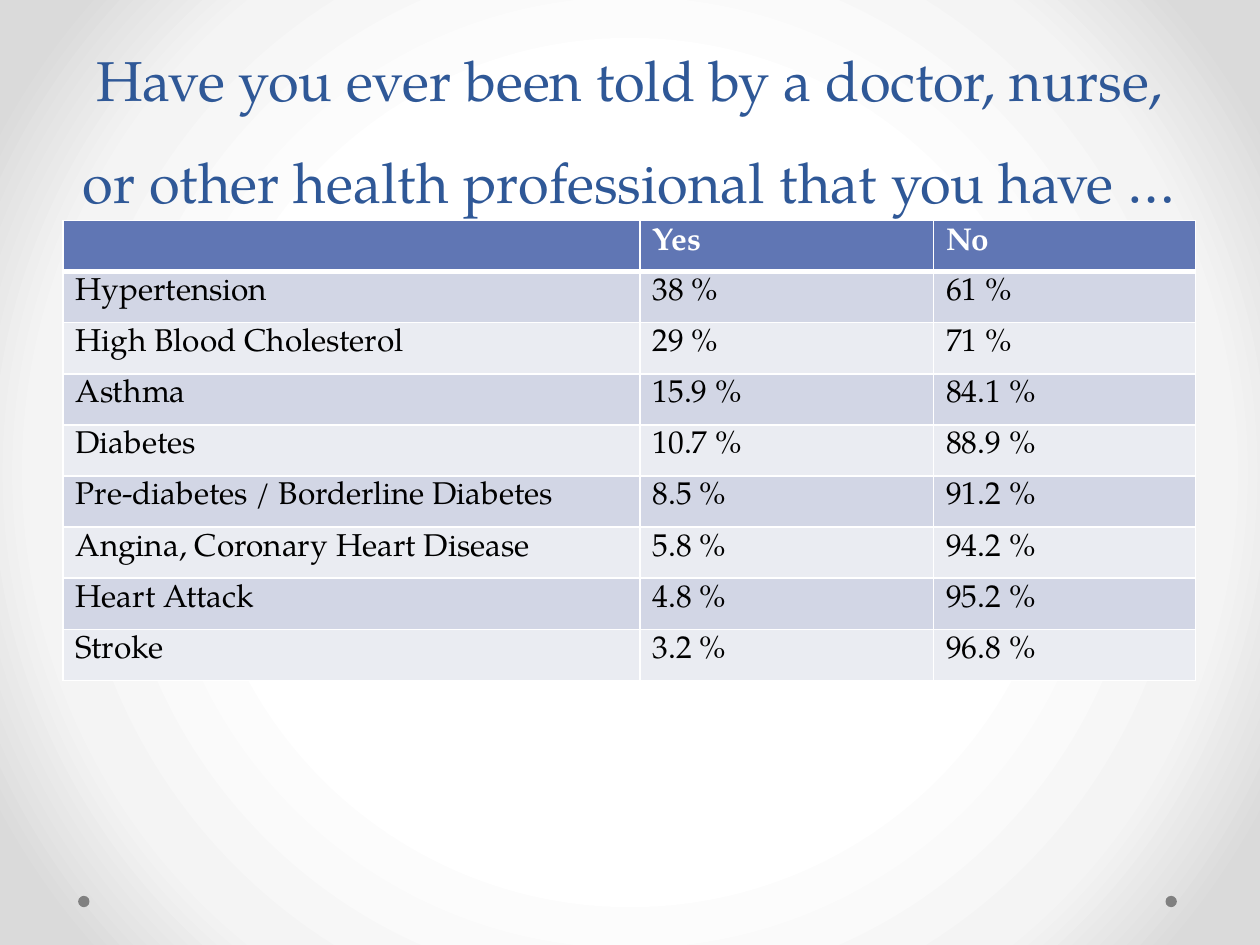
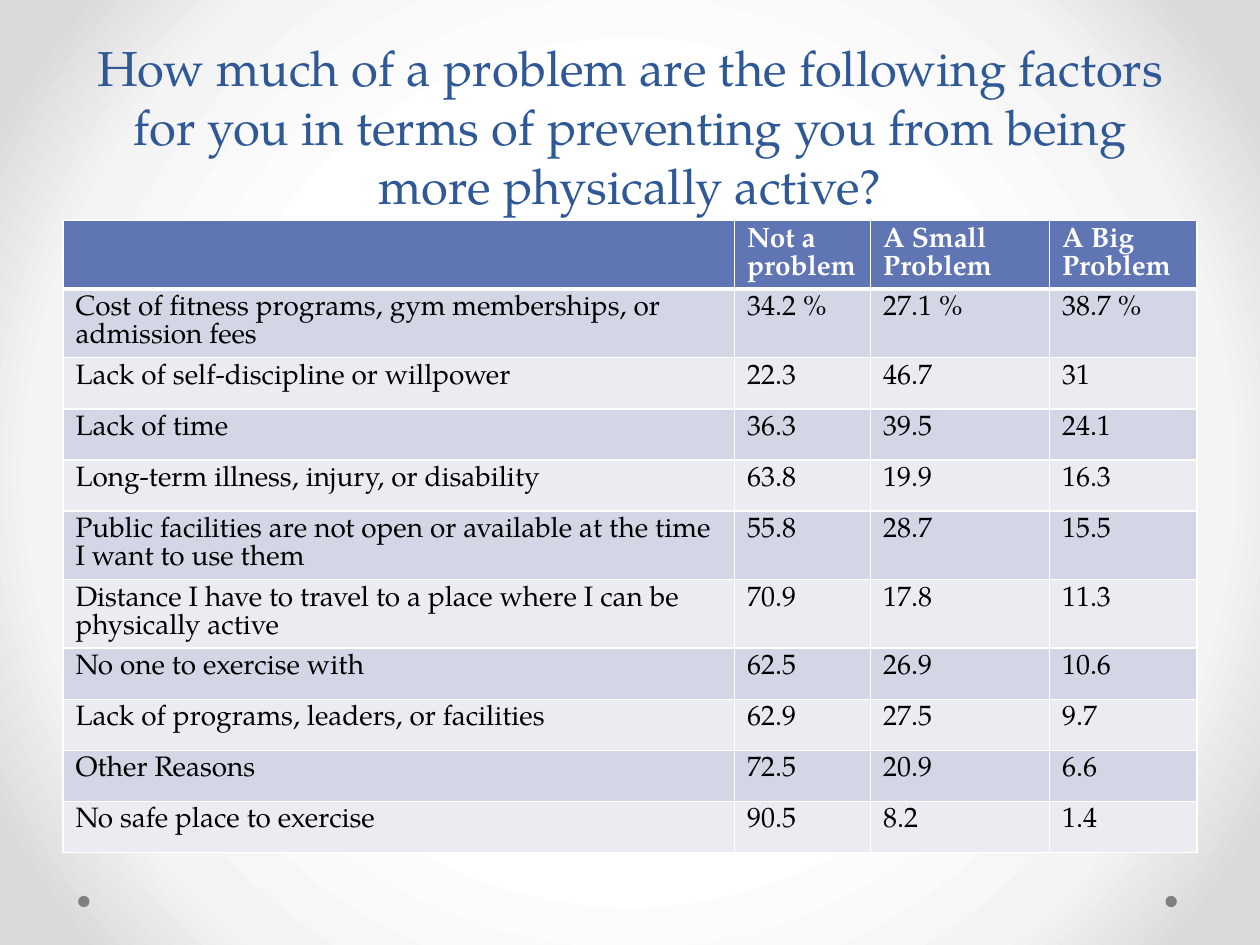
from lxml.etree import SubElement
from pptx import Presentation
from pptx.dml.color import RGBColor
from pptx.enum.shapes import MSO_SHAPE
from pptx.enum.text import MSO_ANCHOR, PP_ALIGN
from pptx.oxml.ns import qn
from pptx.util import Inches, Pt

FONT = "TeX Gyre Pagella"
BLUE, HEAD, BANDS = "2F5897", "6076B4", ("D2D6E5", "EAECF2")
WHITE, BLACK, GREY = "FFFFFF", "000000", "808080"
GLOW = ((50, "FFFFFF"), (76, "F4F4F4"), (92, "DADADA"))
WIDE, HIGH = 10, 7.5
EDGE, TOP = 0.5, 1.75
SPAN = WIDE - 2 * EDGE
ROW = 3.65 / 9
DOT, DOT_Y, DOTS = 0.09, 7.11, (0.62, 9.25)

PAGES = [
    {
        "title": "Have you ever been told by a doctor, nurse, "
                 "or other health professional that you have …",
        "size": 32, "lead": 58, "text": 18,
        "cols": (4.58, 2.33, 2.08),
        "rows": [
            ("", "Yes", "No"),
            ("Hypertension", "38 %", "61 %"),
            ("High Blood Cholesterol", "29 %", "71 %"),
            ("Asthma", "15.9 %", "84.1 %"),
            ("Diabetes", "10.7 %", "88.9 %"),
            ("Pre-diabetes / Borderline Diabetes", "8.5 %", "91.2 %"),
            ("Angina, Coronary Heart Disease", "5.8 %", "94.2 %"),
            ("Heart Attack", "4.8 %", "95.2 %"),
            ("Stroke", "3.2 %", "96.8 %"),
        ],
    },
    {
        "title": "How much of a problem are the following factors for you "
                 "in terms of preventing you from being more physically active?",
        "size": 28, "lead": None, "text": 16,
        "cols": (5.33, 1.08, 1.42, 1.17),
        "rows": [
            ("", "Not a problem", "A Small Problem", "A Big Problem"),
            ("Cost of fitness programs, gym memberships, or admission fees",
             "34.2 %", "27.1 %", "38.7 %"),
            ("Lack of self-discipline or willpower", "22.3", "46.7", "31"),
            ("Lack of time", "36.3", "39.5", "24.1"),
            ("Long-term illness, injury, or disability", "63.8", "19.9", "16.3"),
            ("Public facilities are not open or available at the time "
             "I want to use them", "55.8", "28.7", "15.5"),
            ("Distance I have to travel to a place where I can be "
             "physically active", "70.9", "17.8", "11.3"),
            ("No one to exercise with", "62.5", "26.9", "10.6"),
            ("Lack of programs, leaders, or facilities", "62.9", "27.5", "9.7"),
            ("Other Reasons", "72.5", "20.9", "6.6"),
            ("No safe place to exercise", "90.5", "8.2", "1.4"),
        ],
    },
]


def tint(code):
    return RGBColor.from_string(code)


def paint(item, code):
    item.fill.solid()
    item.fill.fore_color.rgb = tint(code)


def style(par, size, code, bold=False, lead=None):
    font = par.font
    font.name, font.size, font.bold = FONT, Pt(size), bold
    font.color.rgb = tint(code)
    if lead:
        par.line_spacing = Pt(lead)


def glow(slide):
    slide.background.fill.gradient()
    grad = slide.element.find(".//" + qn("a:gradFill"))
    for part in list(grad):
        grad.remove(part)
    stops = SubElement(grad, qn("a:gsLst"))
    for share, code in GLOW:
        stop = SubElement(stops, qn("a:gs"), pos=str(share * 1000))
        SubElement(stop, qn("a:srgbClr"), val=code)
    ring = SubElement(grad, qn("a:path"), path="circle")
    SubElement(ring, qn("a:fillToRect"), dict.fromkeys("ltrb", "50000"))


def dots(slide):
    for left in DOTS:
        dot = slide.shapes.add_shape(
            MSO_SHAPE.OVAL, *map(Inches, (left, DOT_Y, DOT, DOT)))
        dot.shadow.inherit = False
        paint(dot, GREY)
        dot.line.fill.background()


def title(slide, page):
    box = slide.shapes.add_textbox(*map(Inches, (EDGE, 0, SPAN, TOP)))
    frame = box.text_frame
    frame.word_wrap = True
    frame.vertical_anchor = MSO_ANCHOR.BOTTOM
    par = frame.paragraphs[0]
    par.text = page["title"]
    par.alignment = PP_ALIGN.CENTER
    style(par, page["size"], BLUE, lead=page["lead"])


def border(cell, row):
    props = cell._tc.get_or_add_tcPr()
    thick = {"T": 3 if row == 1 else 1, "B": 3 if row == 0 else 1}
    for side in "LRTB":
        line = SubElement(props, qn("a:ln" + side),
                          w=str(Pt(thick.get(side, 1))))
        fill = SubElement(line, qn("a:solidFill"))
        SubElement(fill, qn("a:srgbClr"), val=WHITE)


def table(slide, page):
    rows, cols, size = page["rows"], page["cols"], page["text"]
    grid = slide.shapes.add_table(
        len(rows), len(cols),
        *map(Inches, (EDGE, TOP, SPAN, ROW * len(rows)))).table
    for col, width in zip(grid.columns, cols):
        col.width = Inches(width)
    for r, row in enumerate(rows):
        grid.rows[r].height = Inches(ROW)
        for c, text in enumerate(row):
            cell = grid.cell(r, c)
            border(cell, r)
            paint(cell, BANDS[(r - 1) % 2] if r else HEAD)
            par = cell.text_frame.paragraphs[0]
            par.text = text
            style(par, size, BLACK if r else WHITE, bold=not r, lead=size)


def main():
    deck = Presentation()
    deck.slide_width, deck.slide_height = Inches(WIDE), Inches(HIGH)
    for page in PAGES:
        slide = deck.slides.add_slide(deck.slide_layouts[6])
        for draw in (glow, dots):
            draw(slide)
        title(slide, page)
        table(slide, page)
    deck.save("out.pptx")


if __name__ == "__main__":
    main()
